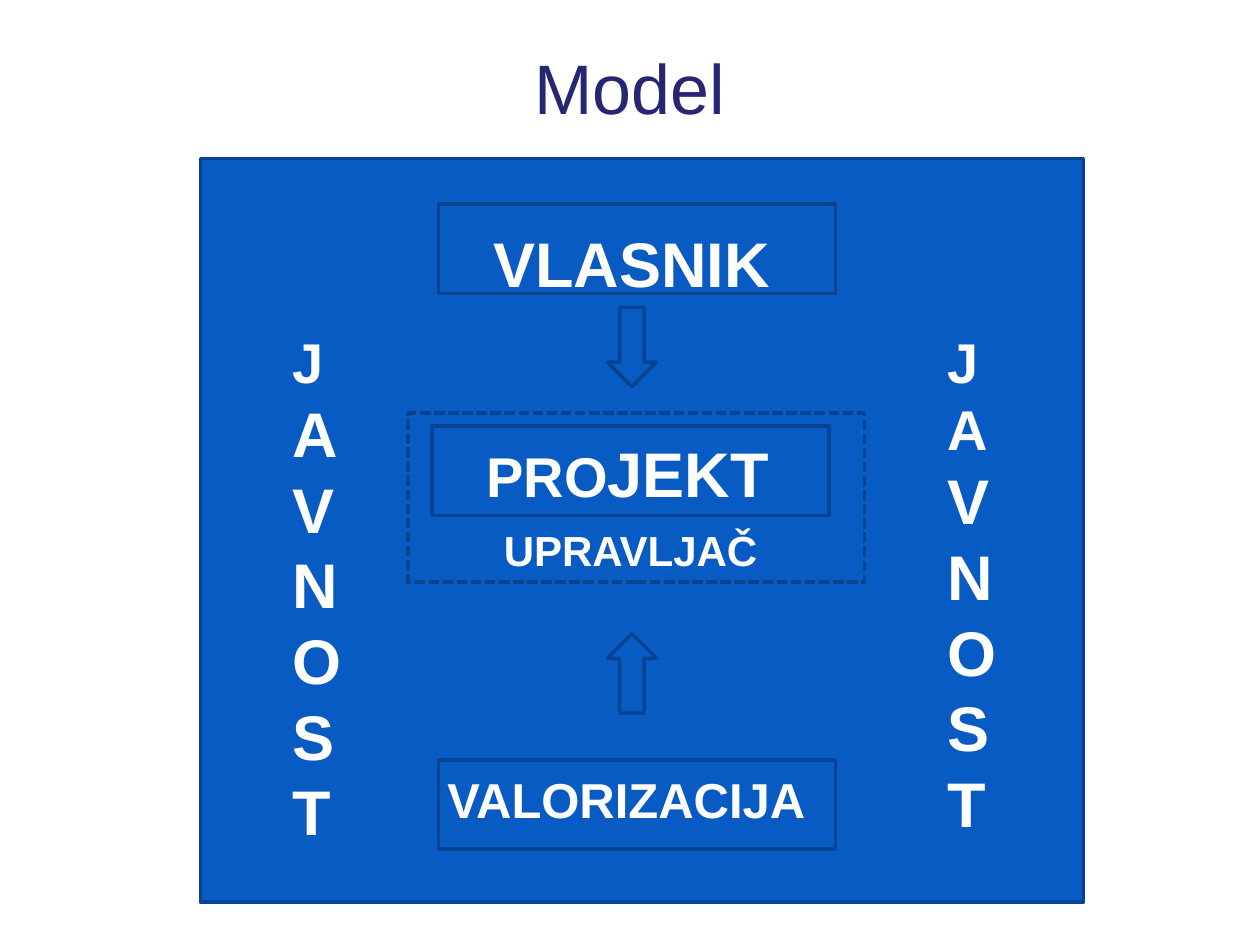
from pptx import Presentation
from pptx.dml.color import RGBColor
from pptx.enum.dml import MSO_LINE
from pptx.enum.shapes import MSO_SHAPE
from pptx.enum.text import MSO_ANCHOR, PP_ALIGN
from pptx.util import Inches, Pt

BLUE = RGBColor(0x09, 0x5B, 0xC4)
DARK_BLUE = RGBColor(0x07, 0x43, 0x91)
NAVY = RGBColor(0x26, 0x26, 0x73)
WHITE = RGBColor(0xFF, 0xFF, 0xFF)
FONT = "Arial"

# Content: frames and boxes (left, top, width, height)
TITLE = "Model"
PUBLIC_FRAME = (1.59, 1.26, 7.01, 5.9)
MANAGER_FRAME = (3.24, 3.28, 3.62, 1.34)
BOX_SIZE = (3.15, 0.71)
BOX_CORNERS = [(3.48, 1.62), (3.43, 3.38), (3.48, 6.03)]

# Arrows towards the project: (top, rotation)
ARROW_LEFT, ARROW_SIZE = 4.82, (0.39, 0.63)
ARROWS = [(2.44, 0), (5.03, 180)]

# Labels: (left, top, width, height), [(text, size), ...]
# The narrow columns wrap to one letter a line.
LABELS = [
    ((3.48, 1.73, 3.07, 0.71), [("VLASNIK", 36)]),
    ((3.64, 3.4, 2.68, 0.7), [("PRO", 32), ("JEKT", 36)]),
    ((3.24, 4.11, 3.53, 0.5), [("UPRAVLJAČ", 24)]),
    ((3.3, 6.06, 3.34, 0.57), [("VALORIZACIJA", 28)]),
    ((2.22, 2.55, 0.39, 4.24), [("J", 32), ("AVNOST", 36)]),
    ((7.42, 2.55, 0.39, 4.17), [("JA", 32), ("VNOST", 36)]),
]


def inches(bounds):
    return [Inches(length) for length in bounds]


def add_block(slide, preset, bounds):
    block = slide.shapes.add_shape(preset, *inches(bounds))
    block.shadow.inherit = False
    block.fill.solid()
    block.fill.fore_color.rgb = BLUE
    block.line.color.rgb = DARK_BLUE
    block.line.width = Pt(2)
    return block


def add_label(slide, bounds, parts):
    frame = slide.shapes.add_textbox(*inches(bounds)).text_frame
    frame.word_wrap = True
    paragraph = frame.paragraphs[0]
    paragraph.alignment = PP_ALIGN.CENTER
    for text, size in parts:
        run = paragraph.add_run()
        run.text = text
        run.font.name = FONT
        run.font.size = Pt(size)
        run.font.bold = True
        run.font.color.rgb = WHITE


def add_title(slide):
    title = slide.shapes.title
    title.left, title.top, title.width, title.height = inches((0.5, 0.15, 9, 0.87))
    frame = title.text_frame
    frame.text = TITLE
    frame.vertical_anchor = MSO_ANCHOR.BOTTOM
    frame.margin_left = frame.margin_right = frame.margin_bottom = 0
    paragraph = frame.paragraphs[0]
    paragraph.alignment = PP_ALIGN.CENTER
    paragraph.font.name = FONT
    paragraph.font.size = Pt(40)
    paragraph.font.color.rgb = NAVY


def main():
    prs = Presentation()
    prs.slide_width, prs.slide_height = Inches(10), Inches(7.5)
    slide = prs.slides.add_slide(prs.slide_layouts[5])
    add_title(slide)

    # Frames, then the boxes inside them
    add_block(slide, MSO_SHAPE.RECTANGLE, PUBLIC_FRAME)
    manager = add_block(slide, MSO_SHAPE.RECTANGLE, MANAGER_FRAME)
    manager.line.dash_style = MSO_LINE.SQUARE_DOT
    for corner in BOX_CORNERS:
        add_block(slide, MSO_SHAPE.RECTANGLE, corner + BOX_SIZE)

    # Arrows
    for top, rotation in ARROWS:
        arrow = add_block(slide, MSO_SHAPE.DOWN_ARROW, (ARROW_LEFT, top) + ARROW_SIZE)
        arrow.rotation = rotation

    # Text
    for bounds, parts in LABELS:
        add_label(slide, bounds, parts)

    prs.save("out.pptx")


if __name__ == "__main__":
    main()
